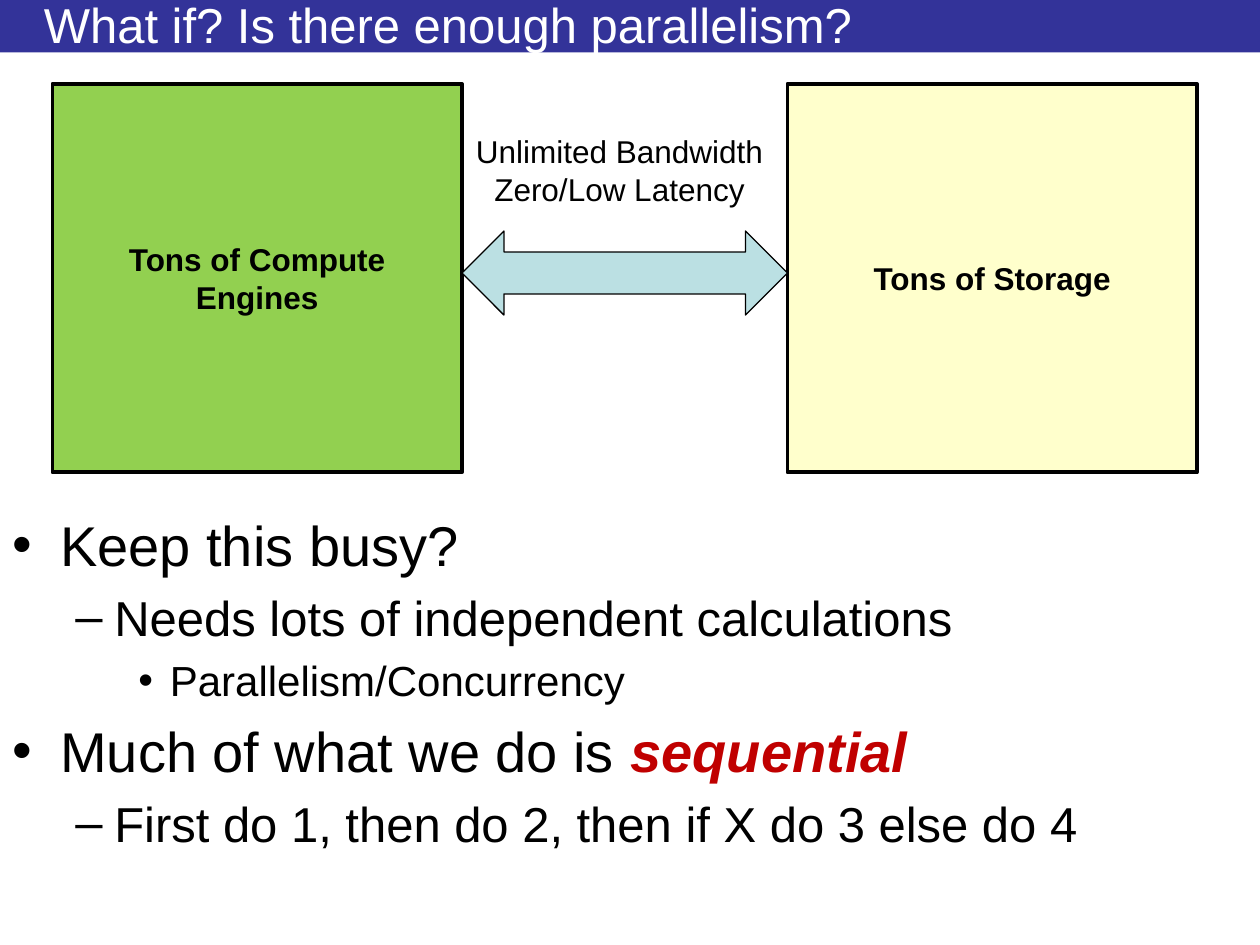
import pptx
import pptx.dml.color
import pptx.enum.shapes
import pptx.enum.text
import pptx.oxml
import pptx.oxml.ns
import pptx.util

SHAPES = pptx.enum.shapes.MSO_SHAPE
ANCHOR = pptx.enum.text.MSO_ANCHOR
ALIGN = pptx.enum.text.PP_ALIGN

CELL = pptx.util.Inches(1) / 12  # grid of 120 columns by 90 rows
COLUMNS, ROWS = 120, 90


class Theme:
    font = "Arial"
    text, title_text, accent = "000000", "FFFFFF", "C00000"
    band, compute, storage, link = "333399", "92D050", "FFFFCC", "BBE0E3"
    title_size, label_size = 28, 18
    box_line, link_line = 2.25, 0.75
    # bullet, type size, text indent and hanging indent in inches, by level
    levels = (("•", 32, 0.38, 0.38), ("–", 28, 0.81, 0.31), ("•", 24, 1.25, 0.25))


def color(value):
    return pptx.dml.color.RGBColor.from_string(value)


def place(left, top, width, height):
    return [round(cells * CELL) for cells in (left, top, width, height)]


def set_values(target, values):
    for name, value in values.items():
        setattr(target, name, value)


def add_run(paragraph, text, size, ink=Theme.text, **styles):
    run = paragraph.add_run()
    run.text = text
    set_values(run.font, {"name": Theme.font, "size": pptx.util.Pt(size), **styles})
    run.font.color.rgb = color(ink)


def write_lines(shape, lines, size, anchor=ANCHOR.MIDDLE, align=ALIGN.CENTER, **styles):
    frame = shape.text_frame
    set_values(frame, {"word_wrap": True, "vertical_anchor": anchor})
    for index, line in enumerate(lines):
        paragraph = frame.add_paragraph() if index else frame.paragraphs[0]
        paragraph.alignment = align
        add_run(paragraph, line, size, **styles)


def add_block(slide, kind, area, fill, line_width=None):
    shape = slide.shapes.add_shape(kind, *place(*area))
    shape.shadow.inherit = False
    shape.fill.solid()
    shape.fill.fore_color.rgb = color(fill)
    if line_width is None:
        shape.line.fill.background()
    else:
        shape.line.color.rgb = color(Theme.text)
        shape.line.width = pptx.util.Pt(line_width)
    return shape


def add_text(slide, area, lines, size, **options):
    shape = slide.shapes.add_textbox(*place(*area))
    write_lines(shape, lines, size, **options)


def set_bullet(paragraph, bullet, indent, hanging):
    properties = paragraph._p.get_or_add_pPr()
    properties.set("marL", str(pptx.util.Inches(indent)))
    properties.set("indent", str(-pptx.util.Inches(hanging)))
    namespace = pptx.oxml.ns.nsdecls("a")
    for xml in (
        f'<a:spcBef {namespace}><a:spcPct val="20000"/></a:spcBef>',
        f'<a:buFont {namespace} typeface="{Theme.font}"/>',
        f'<a:buChar {namespace} char="{bullet}"/>',
    ):
        properties.append(pptx.oxml.parse_xml(xml))


def add_bullets(slide, area, items):
    frame = slide.shapes.add_textbox(*place(*area)).text_frame
    frame.word_wrap = True
    for index, (level, text, emphasis) in enumerate(items):
        paragraph = frame.add_paragraph() if index else frame.paragraphs[0]
        bullet, size, indent, hanging = Theme.levels[level]
        paragraph.level = level
        set_bullet(paragraph, bullet, indent, hanging)
        add_run(paragraph, text, size)
        if emphasis:
            add_run(paragraph, emphasis, size, Theme.accent, bold=True, italic=True)


def main():
    presentation = pptx.Presentation()
    set_values(presentation, {
        "slide_width": round(COLUMNS * CELL),
        "slide_height": round(ROWS * CELL),
    })
    slide = presentation.slides.add_slide(presentation.slide_layouts[6])

    # Title band
    add_block(slide, SHAPES.RECTANGLE, (0, 0, COLUMNS, 5), Theme.band)
    add_text(slide, (3, 0.6, 111, 3.4), ["What if? Is there enough parallelism?"],
             Theme.title_size, align=ALIGN.LEFT, ink=Theme.title_text)

    # Bullet list in the lower part
    add_bullets(slide, (0, 48, COLUMNS, 42), [
        (0, "Keep this busy?", None),
        (1, "Needs lots of independent calculations", None),
        (2, "Parallelism/Concurrency", None),
        (0, "Much of what we do is ", "sequential"),
        (1, "First do 1, then do 2, then if X do 3 else do 4", None),
    ])

    # Compute and storage boxes
    box_left, box_width, gap = 5, 39, 31
    boxes = [("Tons of Compute Engines", Theme.compute), ("Tons of Storage", Theme.storage)]
    for index, (label, fill) in enumerate(boxes):
        left = box_left + index * (box_width + gap)
        box = add_block(slide, SHAPES.RECTANGLE, (left, 8, box_width, 37),
                        fill, Theme.box_line)
        write_lines(box, [label], Theme.label_size, bold=True)

    # Link between the boxes, with its label
    add_block(slide, SHAPES.LEFT_RIGHT_ARROW, (box_left + box_width, 22, gap, 8),
              Theme.link, Theme.link_line)
    add_text(slide, (42, 12, 34, 8.5), ["Unlimited Bandwidth", "Zero/Low Latency"],
             Theme.label_size, anchor=ANCHOR.TOP)

    presentation.save("out.pptx")


if __name__ == "__main__":
    main()
